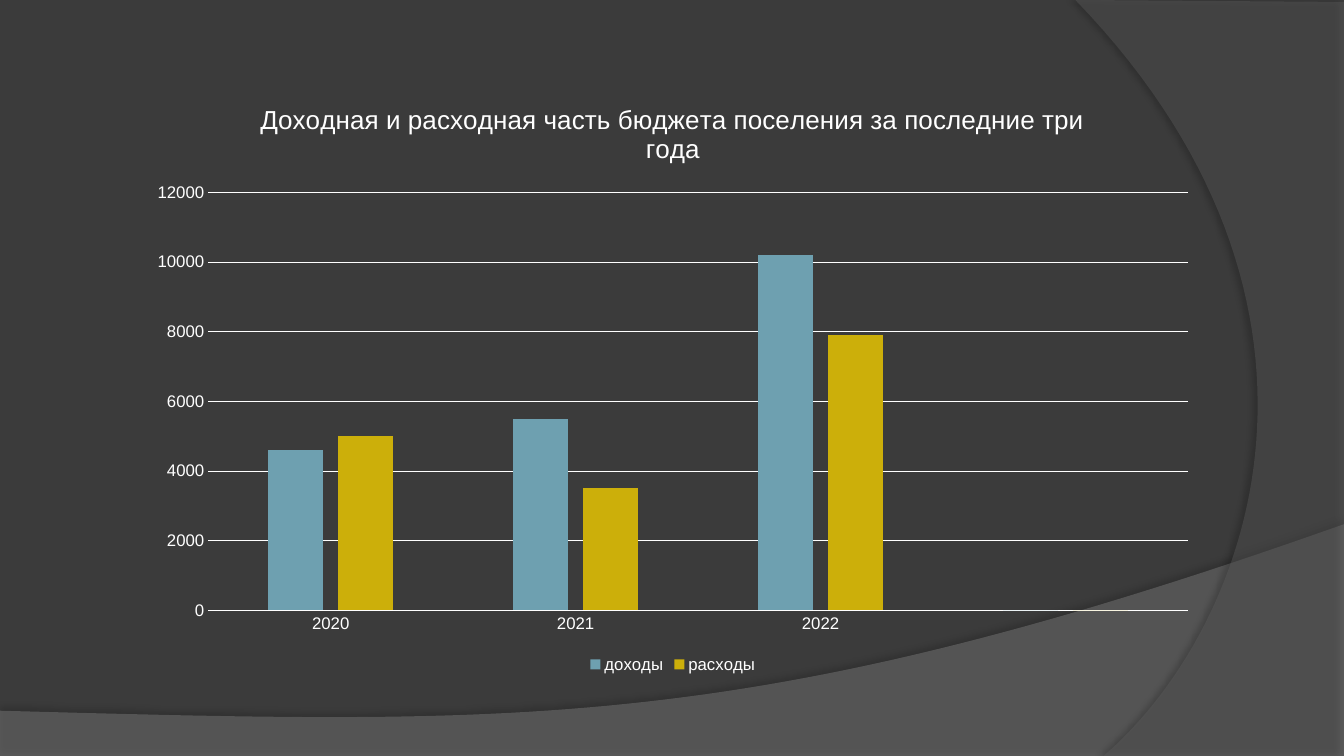
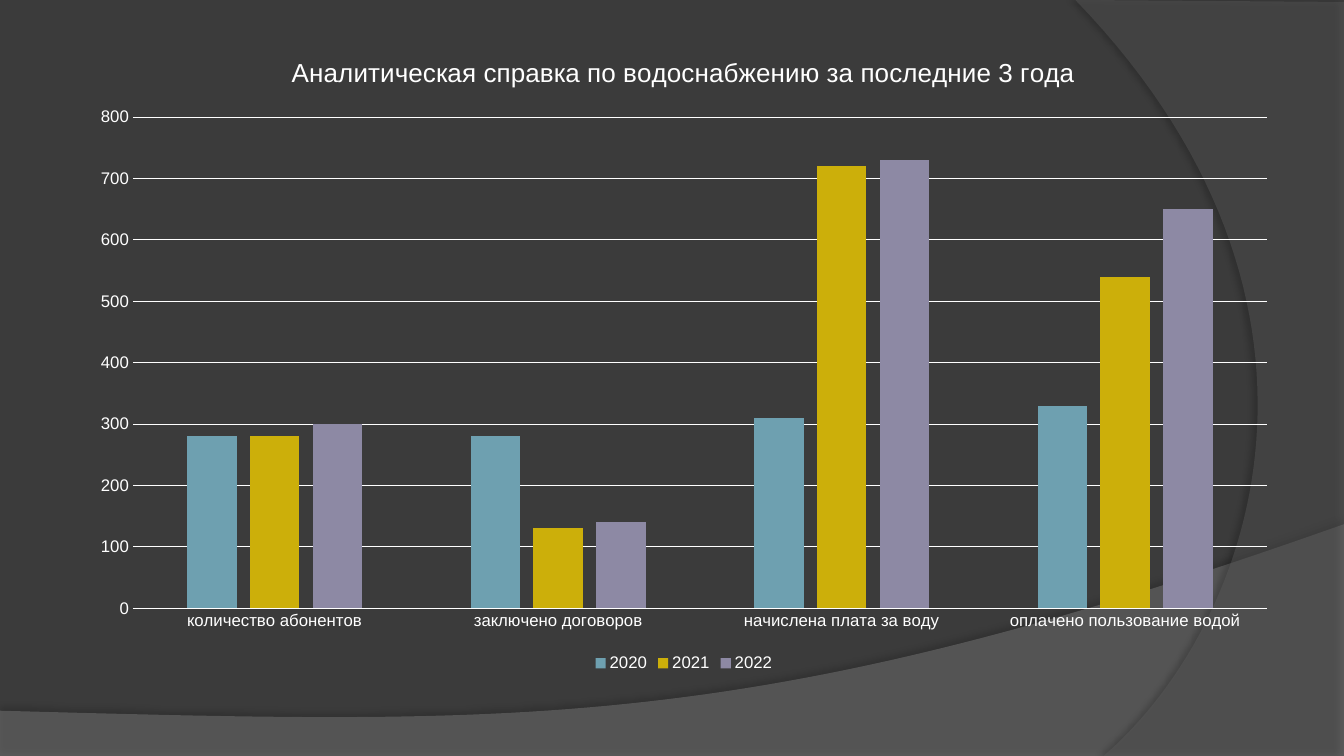
from lxml.etree import SubElement
from pptx import Presentation
from pptx.chart.data import CategoryChartData
from pptx.dml.color import RGBColor
from pptx.enum.chart import XL_CHART_TYPE as ChartType, XL_LEGEND_POSITION as LegendPosition, XL_TICK_MARK as TickMark
from pptx.oxml.ns import qn
from pptx.util import Cm, Pt

WIDTH, HEIGHT = 33.87, 19.05


def color(hex_text):
    return RGBColor.from_string(hex_text)


def bezier(start, first, second, end, steps=60):
    points = []
    for step in range(1, steps + 1):
        t = step / steps
        weights = ((1 - t) ** 3, 3 * t * (1 - t) ** 2, 3 * t * t * (1 - t), t ** 3)
        points.append(tuple(
            sum(weight * value for weight, value in zip(weights, values))
            for values in zip(start, first, second, end)
        ))
    return points


class Deck:
    FONT = "Arial"
    TEXT = "FFFFFF"
    BACKGROUND = "3B3B3B"
    SERIES = ("6EA0B0", "CCAF0A", "8D89A4")
    TITLE_SIZE = 18.6
    LABEL_SIZE = 12

    def __init__(self):
        self.presentation = Presentation()
        self.presentation.slide_width = Cm(WIDTH)
        self.presentation.slide_height = Cm(HEIGHT)
        fill = self.presentation.slide_master.background.fill
        fill.solid()
        fill.fore_color.rgb = color(self.BACKGROUND)
        self.slide = None

    def add_slide(self):
        self.slide = self.presentation.slides.add_slide(self.presentation.slide_layouts[6])
        wave_start, wave_end = (WIDTH, 13.21), (0, 17.91)
        self.add_band(
            [(0, HEIGHT), (WIDTH, HEIGHT), wave_start]
            + bezier(wave_start, (18.92, 18.52), (13.23, 18.26), wave_end),
            "7F7F7F", 45, shadow_alpha=35, distance=3.5, direction=270,
        )
        arc_start, arc_end = (27.81, HEIGHT), (27.1, 0)
        self.add_band(
            [(WIDTH, 0.05), (WIDTH, HEIGHT), arc_start]
            + bezier(arc_start, (31.65, 15.72), (34.47, 7.62), arc_end),
            "5E5E5E", 40, shadow_alpha=45, distance=4, direction=180,
        )

    def add_band(self, points, fill_color, alpha, shadow_alpha, distance, direction):
        corners = [(Cm(x), Cm(y)) for x, y in points]
        builder = self.slide.shapes.build_freeform(*corners[0])
        builder.add_line_segments(corners[1:], close=True)
        shape = builder.convert_to_shape()
        shape.fill.solid()
        shape.fill.fore_color.rgb = color(fill_color)
        shape.line.fill.background()
        shape.shadow.inherit = False
        properties = shape.element.spPr
        self.add_alpha(properties.find(f"{qn('a:solidFill')}/{qn('a:srgbClr')}"), alpha)
        shadow = SubElement(
            properties.find(qn("a:effectLst")), qn("a:outerShdw"),
            blurRad=str(Pt(4)), dist=str(Pt(distance)),
            dir=str(direction * 60000), algn="ctr", rotWithShape="0",
        )
        self.add_alpha(SubElement(shadow, qn("a:srgbClr"), val="000000"), shadow_alpha)

    def add_alpha(self, color_element, percent):
        SubElement(color_element, qn("a:alpha"), val=str(percent * 1000))

    def style_font(self, font, size):
        font.name = self.FONT
        font.size = Pt(size)
        font.bold = False
        font.color.rgb = color(self.TEXT)

    def style_line(self, line):
        line.color.rgb = color(self.TEXT)
        line.width = Pt(0.75)

    def add_column_chart(self, title, categories, series, left, top, width, height):
        data = CategoryChartData()
        data.categories = categories
        for name, values in series.items():
            data.add_series(name, values)
        chart = self.slide.shapes.add_chart(
            ChartType.COLUMN_CLUSTERED, Cm(left), Cm(top), Cm(width), Cm(height), data
        ).chart
        self.style_font(chart.font, self.LABEL_SIZE)

        chart.has_title = True
        run = chart.chart_title.text_frame.paragraphs[0].add_run()
        run.text = title
        self.style_font(run.font, self.TITLE_SIZE)
        chart.chart_title.include_in_layout = False

        chart.has_legend = True
        chart.legend.position = LegendPosition.BOTTOM
        chart.legend.include_in_layout = False
        self.style_font(chart.legend.font, self.LABEL_SIZE)

        for axis in (chart.category_axis, chart.value_axis):
            axis.major_tick_mark = axis.minor_tick_mark = TickMark.NONE
            self.style_font(axis.tick_labels.font, self.LABEL_SIZE)
        self.style_line(chart.category_axis.format.line)
        chart.value_axis.format.line.fill.background()
        chart.value_axis.has_major_gridlines = True
        self.style_line(chart.value_axis.major_gridlines.format.line)

        plot = chart.plots[0]
        plot.vary_by_categories = False
        plot.gap_width = 219
        plot.overlap = -27
        for column, series_color in zip(plot.series, self.SERIES):
            column.format.fill.solid()
            column.format.fill.fore_color.rgb = color(series_color)


def main():
    deck = Deck()

    deck.add_slide()
    deck.add_column_chart(
        "Доходная и расходная часть бюджета поселения за последние три года",
        ["2020", "2021", "2022", ""],
        {"доходы": (4600, 5500, 10200, 0), "расходы": (5000, 3500, 7900, 0)},
        left=3.43, top=2.01, width=27.05, height=15.06,
    )

    deck.add_slide()
    deck.add_column_chart(
        "Аналитическая справка по водоснабжению за последние 3 года",
        ["количество абонентов", "заключено договоров", "начислена плата за воду", "оплачено пользование водой"],
        {"2020": (280, 280, 310, 330), "2021": (280, 130, 720, 540), "2022": (300, 140, 730, 650)},
        left=1.93, top=0.81, width=30.61, height=16.23,
    )

    deck.presentation.save("out.pptx")


if __name__ == "__main__":
    main()
